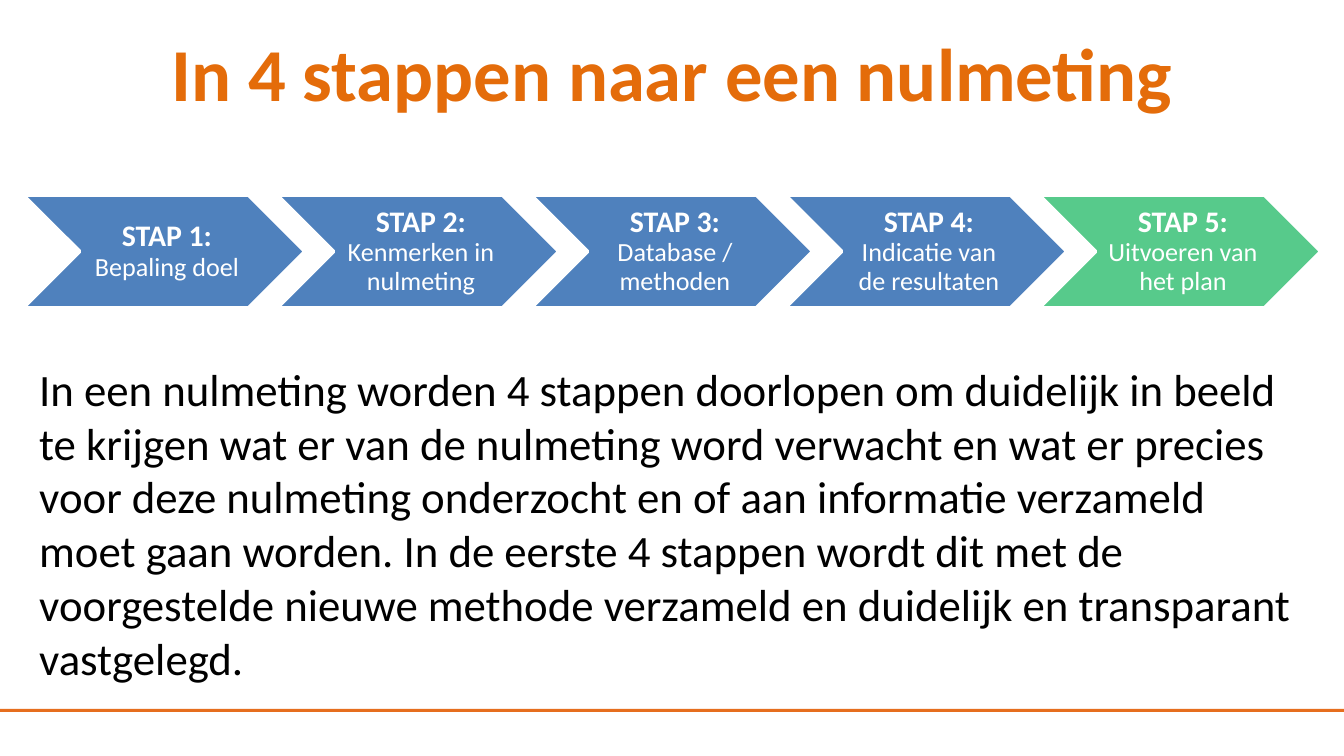
from lxml import etree
from pptx import Presentation
from pptx import util as u
from pptx.dml.color import RGBColor
from pptx.enum import shapes, text
from pptx.oxml.ns import qn

PX = 914400 / 134.4
FONT = "Calibri"
COLORS = {
    "accent": "E46C0A",
    "rule": "E66E1E",
    "step": "4F81BD",
    "final": "00B050",
    "body": "000000",
    "white": "FFFFFF",
}
STEPS = [
    ("STAP 1:", "Bepaling doel"),
    ("STAP 2:", "Kenmerken in nulmeting"),
    ("STAP 3:", "Database / methoden"),
    ("STAP 4:", "Indicatie van de resultaten"),
    ("STAP 5:", "Uitvoeren van het plan"),
]
EXPLANATION = (
    "In een nulmeting worden 4 stappen doorlopen om duidelijk in beeld te krijgen "
    "wat er van de nulmeting word verwacht en wat er precies voor deze nulmeting "
    "onderzocht en of aan informatie verzameld moet gaan worden. In de eerste 4 "
    "stappen wordt dit met de voorgestelde nieuwe methode verzameld en duidelijk "
    "en transparant vastgelegd."
)


def px(*lengths):
    return [u.Emu(round(length * PX)) for length in lengths]


def rgb(name):
    return RGBColor.from_string(COLORS[name])


def style_font(font, size, color, bold=False):
    font.name = FONT
    font.size = u.Pt(size)
    font.bold = bold
    font.color.rgb = rgb(color)


def add_text(slide, box, words, size, color, bold=False,
             align=text.PP_ALIGN.LEFT, anchor=text.MSO_ANCHOR.TOP):
    frame = slide.shapes.add_textbox(*px(*box)).text_frame
    frame.word_wrap = True
    frame.vertical_anchor = anchor
    paragraph = frame.paragraphs[0]
    paragraph.text = words
    paragraph.alignment = align
    style_font(paragraph.font, size, color, bold)


def add_filled(slide, kind, box, color):
    shape = slide.shapes.add_shape(kind, *px(*box))
    shape.shadow.inherit = False
    shape.fill.solid()
    shape.fill.fore_color.rgb = rgb(color)
    shape.line.fill.background()
    return shape


def set_opacity(shape, percent):
    color = shape.fill._xPr.find(qn("a:solidFill"))[0]
    etree.SubElement(color, qn("a:alpha"), val=str(percent * 1000))


def add_step(slide, left, label, description, color):
    chevron = add_filled(slide, shapes.MSO_SHAPE.CHEVRON, (left, 195, 282, 113), color)
    chevron.line.color.rgb = rgb("white")
    chevron.line.width = u.Pt(2)
    frame = chevron.text_frame
    frame.word_wrap = True
    frame.vertical_anchor = text.MSO_ANCHOR.MIDDLE
    (frame.margin_left, frame.margin_top,
     frame.margin_right, frame.margin_bottom) = px(9, 3, 3, 3)
    paragraph = frame.paragraphs[0]
    paragraph.alignment = text.PP_ALIGN.CENTER
    paragraph.line_spacing = 0.9
    heading = paragraph.add_run()
    heading.text = label
    style_font(heading.font, 16, "white", bold=True)
    paragraph.add_line_break()
    detail = paragraph.add_run()
    detail.text = description
    style_font(detail.font, 14, "white")
    return chevron


def main():
    deck = Presentation()
    deck.slide_width, deck.slide_height = px(1344, 756)
    slide = deck.slides.add_slide(deck.slide_layouts[6])

    add_filled(slide, shapes.MSO_SHAPE.RECTANGLE, (0, 709, 1344, 3), "rule")
    add_text(slide, (22, 9, 1300, 126), "In 4 stappen naar een nulmeting", 40, "accent",
             bold=True, align=text.PP_ALIGN.CENTER, anchor=text.MSO_ANCHOR.MIDDLE)
    add_text(slide, (26, 355, 1292, 336), EXPLANATION, 24, "body")

    for index, (label, description) in enumerate(STEPS):
        is_final = index == len(STEPS) - 1
        chevron = add_step(slide, 23 + 254 * index, label, description,
                           "final" if is_final else "step")
        if is_final:
            set_opacity(chevron, 66)

    deck.save("out.pptx")


if __name__ == "__main__":
    main()
